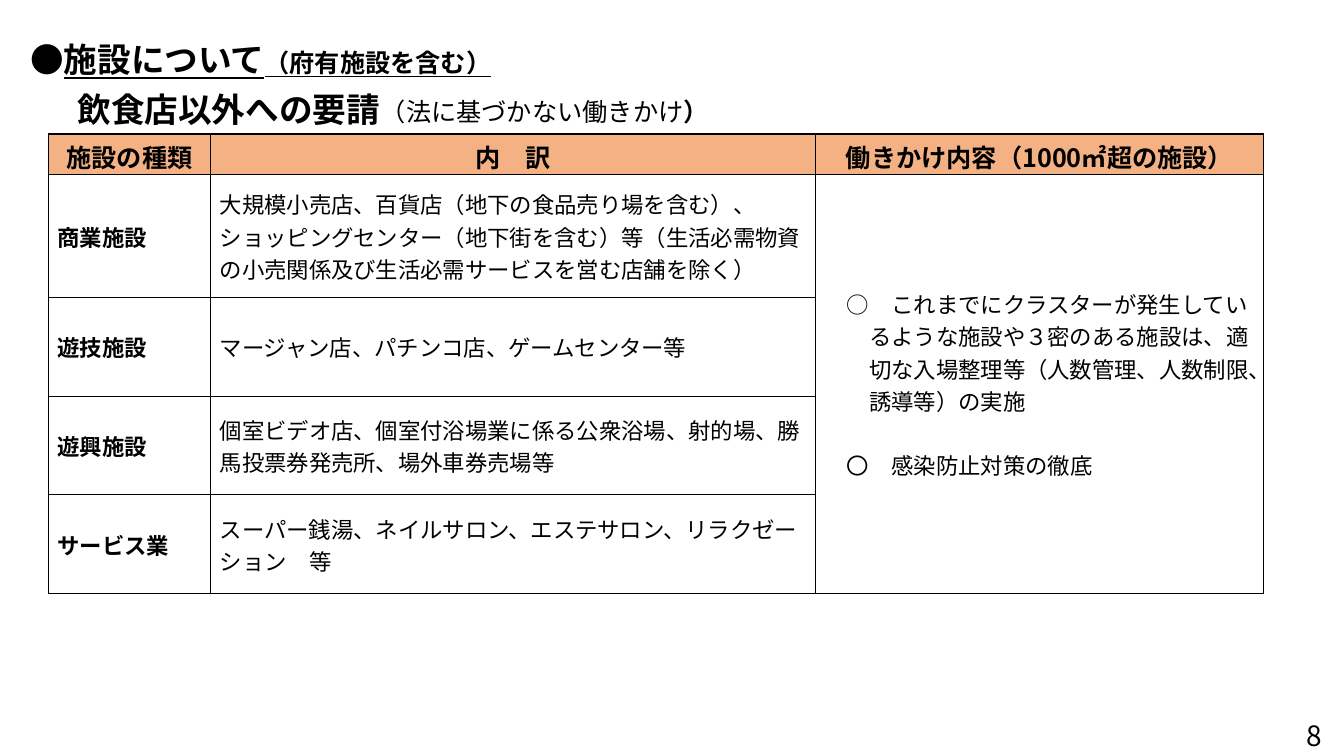
"""Build the slide on requests to facilities other than restaurants."""
from dataclasses import dataclass

from lxml import etree
from pptx import Presentation
from pptx import util as u
from pptx.dml.color import RGBColor
from pptx.enum import lang, text
from pptx.oxml import ns


@dataclass(frozen=True)
class Theme:
    font: str = "Noto Sans CJK JP"
    ink: str = "000000"
    head: str = "F4B183"
    paper: str = "FFFFFF"
    big: int = 24
    page: int = 20
    mid: int = 18
    body: int = 16
    rule: float = 1


T = Theme()
WIDE, HIGH = 13.33, 7.5

TITLE = [("●", T.big, True, False), ("施設について", T.big, True, True),
         ("（府有施設を含む）", T.mid, True, True)]
SUB = [("飲食店以外への要請", T.big, True, False)]
NOTE = [("（法に基づかない働きかけ", T.mid, False, False), ("）", T.mid, True, False)]
PAGE = [("8", T.page, False, False)]

HEADS = ["施設の種類", "内　訳", "働きかけ内容（1000㎡超の施設）"]
KINDS = [
    ("商業施設", "大規模小売店、百貨店（地下の食品売り場を含む）、ショッピングセンター（地下街を含む）等"
     "（生活必需物資の小売関係及び生活必需サービスを営む店舗を除く）"),
    ("遊技施設", "マージャン店、パチンコ店、ゲームセンター等"),
    ("遊興施設", "個室ビデオ店、個室付浴場業に係る公衆浴場、射的場、勝馬投票券発売所、場外車券売場等"),
    ("サービス業", "スーパー銭湯、ネイルサロン、エステサロン、リラクゼーション　等"),
]
ASKS = ["○　これまでにクラスターが発生しているような施設や３密のある施設は、"
        "適切な入場整理等（人数管理、人数制限、誘導等）の実施",
        "〇　感染防止対策の徹底"]

COLS = [1.61, 6, 4.44]
ROWS = [0.4, 1.22] + [0.98] * 3
GRID = (0.48, 1.33, sum(COLS), sum(ROWS))
PAD, STEP = 0.08, 0.22


def box(spot):
    return [u.Inches(n) for n in spot]


def write(para, runs, align=text.PP_ALIGN.LEFT):
    para.alignment = align
    for words, size, bold, line in runs:
        run = para.add_run()
        run.text = words
        font = run.font
        font.name, font.size = T.font, u.Pt(size)
        font.bold, font.underline = bold, line
        font.color.rgb = RGBColor.from_string(T.ink)
        font.language_id = lang.MSO_LANGUAGE_ID.JAPANESE
        east = etree.Element(ns.qn("a:ea"), typeface=T.font)
        run._r.rPr.find(ns.qn("a:latin")).addnext(east)


def label(slide, spot, runs, align=text.PP_ALIGN.LEFT, wrap=True):
    frame = slide.shapes.add_textbox(*box(spot)).text_frame
    frame.word_wrap = wrap
    write(frame.paragraphs[0], runs, align)
    return frame


def indent(para, left, first=0):
    props = para._p.get_or_add_pPr()
    props.set("marL", str(u.Inches(left)))
    props.set("indent", str(u.Inches(first)))


def dress(cell, color):
    cell.fill.solid()
    cell.fill.fore_color.rgb = RGBColor.from_string(color)
    cell.vertical_anchor = text.MSO_ANCHOR.MIDDLE
    props = cell._tc.get_or_add_tcPr()
    for spot, side in enumerate("LRTB"):
        edge = etree.Element(ns.qn(f"a:ln{side}"), w=str(u.Pt(T.rule)))
        fill = etree.SubElement(edge, ns.qn("a:solidFill"))
        etree.SubElement(fill, ns.qn("a:srgbClr"), val=T.ink)
        props.insert(spot, edge)


def inset(cell, top=0.01, side=0.01):
    cell.margin_left = cell.margin_right = u.Inches(side)
    cell.margin_top, cell.margin_bottom = u.Inches(top), 0


def fill_table(slide):
    table = slide.shapes.add_table(len(ROWS), len(COLS), *box(GRID)).table
    table.first_row = table.horz_banding = False
    for col, size in zip(table.columns, COLS):
        col.width = u.Inches(size)
    for row, size in zip(table.rows, ROWS):
        row.height = u.Inches(size)
    for r in range(len(ROWS)):
        for c in range(len(COLS)):
            dress(table.cell(r, c), T.paper if r else T.head)
    for c, words in enumerate(HEADS):
        cell = table.cell(0, c)
        inset(cell, 0.04, 0.1)
        write(cell.text_frame.paragraphs[0], [(words, T.mid, True, False)],
              text.PP_ALIGN.CENTER)
    for r, pair in enumerate(KINDS, 1):
        for c, words in enumerate(pair):
            cell = table.cell(r, c)
            inset(cell)
            para = cell.text_frame.paragraphs[0]
            write(para, [(words, T.body, c == 0, False)])
            indent(para, PAD)
    asks = table.cell(1, 2)
    asks.merge(table.cell(len(KINDS), 2))
    inset(asks)
    for i, words in enumerate(ASKS):
        frame = asks.text_frame
        para = frame.add_paragraph() if i else frame.paragraphs[0]
        write(para, [(words, T.body, False, False)])
        indent(para, PAD + 2 * STEP, -STEP)
        para.space_before = u.Pt(23 * i)


def main():
    deck = Presentation()
    deck.slide_width, deck.slide_height = box((WIDE, HIGH))
    slide = deck.slides.add_slide(deck.slide_layouts[5])
    title = slide.shapes.title
    title.left, title.top, title.width, title.height = box((0.2, 0.34, 7.39, 0.5))
    frame = title.text_frame
    frame.auto_size = text.MSO_AUTO_SIZE.NONE
    frame.vertical_anchor = text.MSO_ANCHOR.TOP
    write(frame.paragraphs[0], TITLE)
    frame.paragraphs[0].line_spacing = 1.0
    note = label(slide, (3.68, 0.89, 3.48, 0.42), NOTE, wrap=False)
    note.paragraphs[0].line_spacing = u.Pt(23)
    label(slide, (0.67, 0.83, 5.02, 0.5), SUB)
    page = label(slide, (10.21, 7.09, 3, 0.4), PAGE, text.PP_ALIGN.RIGHT)
    page.vertical_anchor = text.MSO_ANCHOR.MIDDLE
    fill_table(slide)
    deck.save("out.pptx")


if __name__ == "__main__":
    main()
